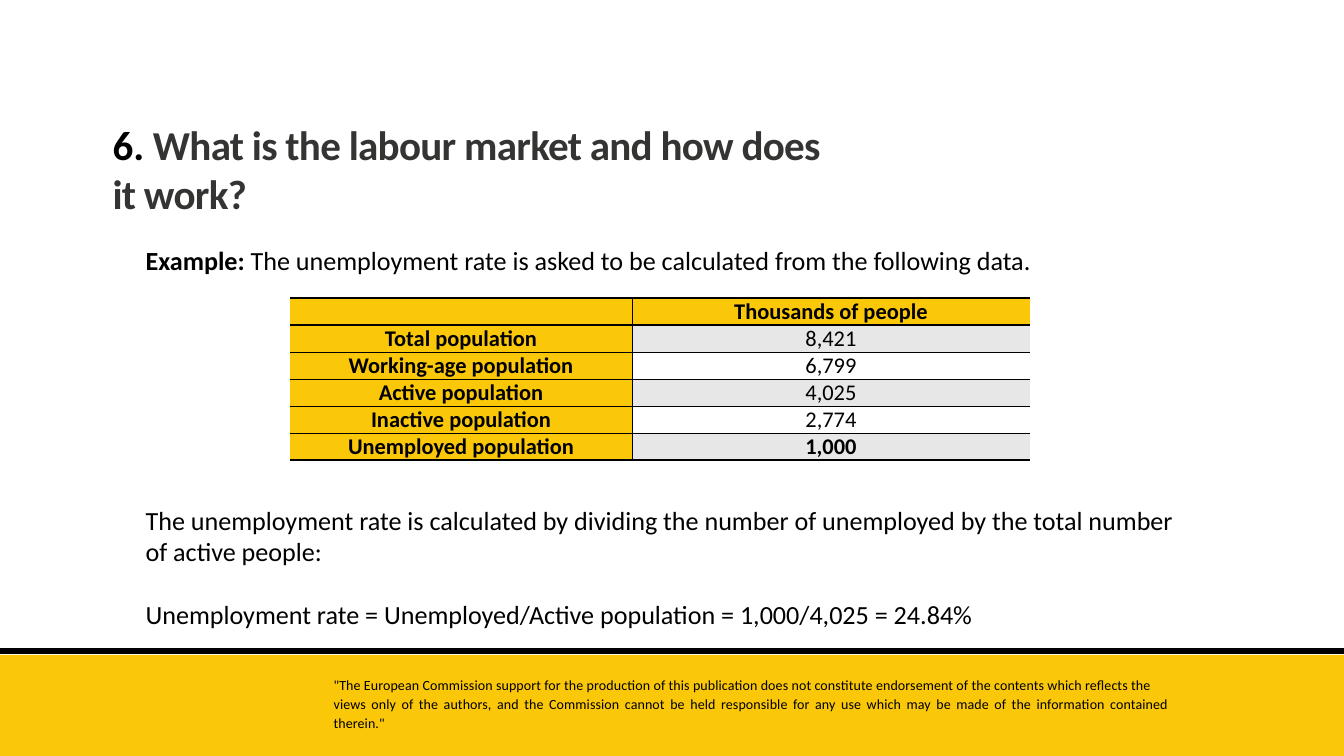
from lxml import etree
from pptx import Presentation
from pptx.dml.color import RGBColor
from pptx.enum import shapes, text
from pptx.oxml.ns import qn
from pptx.util import Emu, Pt

PX = 914400 / 67.2  # EMU in one px
WIDTH, HEIGHT = 1344, 756

BLACK = RGBColor(0x00, 0x00, 0x00)
CHARCOAL = RGBColor(0x34, 0x34, 0x33)
YELLOW = RGBColor(0xFA, 0xC7, 0x09)
GREY = RGBColor(0xE7, 0xE7, 0xE7)
WHITE = RGBColor(0xFF, 0xFF, 0xFF)


def px(value):
    return Emu(round(value * PX))


class Deck:
    font = "Calibri"

    def __init__(self):
        self.prs = Presentation()
        self.prs.slide_width, self.prs.slide_height = px(WIDTH), px(HEIGHT)
        self.slide = self.prs.slides.add_slide(self.prs.slide_layouts[6])

    def band(self, left, top, width, height, color):
        band = self.slide.shapes.add_shape(
            shapes.MSO_SHAPE.RECTANGLE, px(left), px(top), px(width), px(height))
        band.shadow.inherit = False
        band.fill.solid()
        band.fill.fore_color.rgb = color
        band.line.fill.background()

    def rule(self, x1, y1, x2, y2, weight):
        rule = self.slide.shapes.add_connector(
            shapes.MSO_CONNECTOR.STRAIGHT, px(x1), px(y1), px(x2), px(y2))
        rule.line.color.rgb = BLACK
        rule.line.width = Pt(weight)
        etree.SubElement(rule._element.spPr, qn("a:effectLst"))

    def run(self, paragraph, words, size, bold=False, color=BLACK, spacing=0):
        run = paragraph.add_run()
        run.text = words
        style = {"name": self.font, "size": Pt(size), "bold": bold}
        for name, value in style.items():
            setattr(run.font, name, value)
        run.font.color.rgb = color
        if spacing:
            run._r.get_or_add_rPr().set("spc", str(round(spacing * 100)))

    def text(self, left, top, width, height, size, paragraphs):
        """Each paragraph is a list of (words, run style) and a format dict."""
        frame = self.slide.shapes.add_textbox(
            px(left), px(top), px(width), px(height)).text_frame
        frame.word_wrap = True
        for i, (runs, layout) in enumerate(paragraphs):
            paragraph = frame.add_paragraph() if i else frame.paragraphs[0]
            for name, value in layout.items():
                setattr(paragraph, name, value)
            for words, style in runs:
                self.run(paragraph, words, size, **style)

    def border(self, cell, **weights):
        """Weights in points by side; 0 hides that side."""
        props = cell._tc.get_or_add_tcPr()
        for place, side in enumerate("LRTB"):
            weight = weights.get(side, 0)
            line = etree.Element(qn("a:ln" + side), w=str(Pt(weight)))
            if weight:
                fill = etree.SubElement(line, qn("a:solidFill"))
                etree.SubElement(fill, qn("a:srgbClr"), val=str(BLACK))
            else:
                etree.SubElement(line, qn("a:noFill"))
            props.insert(place, line)

    def table(self, left, top, widths, row_height, size, rows):
        count = len(rows)
        table = self.slide.shapes.add_table(
            count, len(widths), px(left), px(top),
            px(sum(widths)), px(row_height * count)).table
        table.first_row = table.horz_banding = False
        for column, width in zip(table.columns, widths):
            column.width = px(width)
        cell_format = {"margin_left": px(3), "margin_right": px(3),
                       "margin_top": 0, "margin_bottom": 0,
                       "vertical_anchor": text.MSO_ANCHOR.BOTTOM}
        for r, row in enumerate(rows):
            table.rows[r].height = px(row_height)
            for c, words in enumerate(row):
                cell = table.cell(r, c)
                for name, value in cell_format.items():
                    setattr(cell, name, value)
                heading = r == 0 or c == 0
                cell.fill.solid()
                cell.fill.fore_color.rgb = (
                    YELLOW if heading else GREY if r % 2 else WHITE)
                self.border(cell, L=int(c > 0), R=int(c < len(widths) - 1),
                            T=2 if r < 2 else 1,
                            B=2 if r in (0, count - 1) else 1)
                paragraph = cell.text_frame.paragraphs[0]
                paragraph.alignment = text.PP_ALIGN.CENTER
                if words:
                    self.run(paragraph, words, size,
                             bold=heading or r == count - 1)
                else:
                    paragraph.font.size = Pt(size)


def main():
    deck = Deck()

    # Footer
    deck.band(0, 655, WIDTH, HEIGHT - 655, YELLOW)
    deck.rule(0, 651, WIDTH, 651, 6.75)
    justified = {"alignment": text.PP_ALIGN.JUSTIFY}
    tracked = {"spacing": 0.1}
    deck.text(327, 675, 849, 59, 15, [
        ([('"The European Commission support for the production of this '
           'publication does not constitute endorsement of the contents '
           'which reflects the', tracked)],
         {**justified, "line_spacing": Pt(16.1)}),
        ([('views only of the authors, and the Commission cannot be held '
           'responsible for any use which may be made of the information '
           'contained therein."', tracked)],
         {**justified, "line_spacing": 1.13}),
    ])

    # Title
    deck.text(106, 116, 739, 106, 44, [
        ([("6.", {"bold": True}),
          (" What is the labour market and how does it work?",
           {"bold": True, "color": CHARCOAL, "spacing": -0.8})], {}),
    ])

    # Example and its data
    deck.text(139, 241, 1042, 38, 28, [
        ([("Example:", {"bold": True}),
          (" The unemployment rate is asked to be calculated from the "
           "following data.", {})], {}),
    ])
    deck.table(290, 298, [342, 398], 27, 24, [
        ("", "Thousands of people"),
        ("Total population", "8,421"),
        ("Working-age population", "6,799"),
        ("Active population", "4,025"),
        ("Inactive population", "2,774"),
        ("Unemployed population", "1,000"),
    ])

    # Calculation
    deck.text(139, 501, 1054, 134, 28, [
        ([("The unemployment rate is calculated by dividing the number of "
           "unemployed by the total number of active people:", {})], {}),
        ([("Unemployment rate = Unemployed/Active population = 1,000/4,025 "
           "= 24.84%", {})], {"space_before": Pt(34)}),
    ])

    deck.prs.save("out.pptx")


if __name__ == "__main__":
    main()
